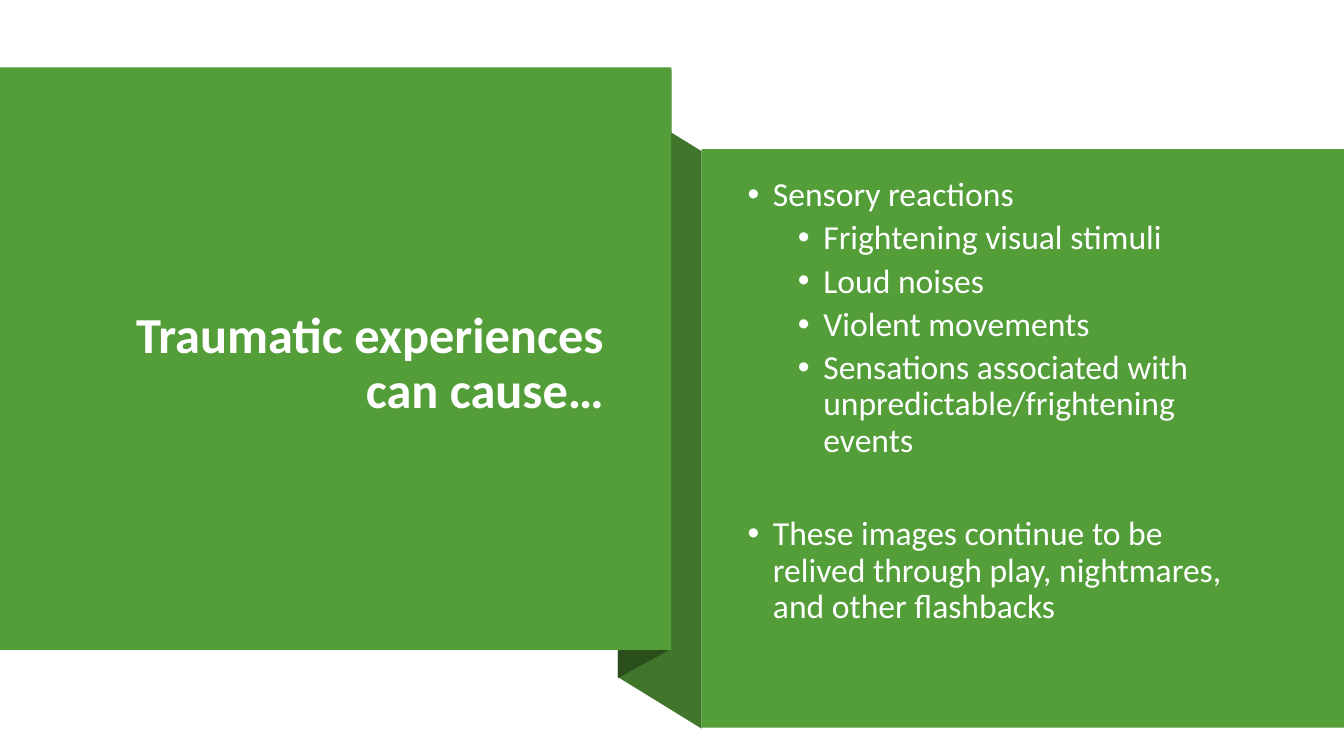
from pptx import Presentation
from pptx.dml.color import RGBColor
from pptx.enum.shapes import MSO_SHAPE as Preset
from pptx.enum.text import MSO_ANCHOR as Anchor, PP_ALIGN as Align
from pptx.oxml.ns import qn
from pptx.util import Cm, Pt
from lxml.etree import SubElement

FONT = "Calibri"
GREEN, MID_GREEN, DARK_GREEN = "549E39", "3F762B", "2A4F1C"
TITLE = "Traumatic experiences can cause…"
REACTIONS = [
    (0, "Sensory reactions", 10),
    (1, "Frightening visual stimuli", 5),
    (1, "Loud noises", 5),
    (1, "Violent movements", 5),
    (1, "Sensations associated with unpredictable/frightening events", 5),
    (0, "These images continue to be relived through play, nightmares, "
        "and other flashbacks", 41),
]


def paint(shape, color):
    shape.shadow.inherit = False
    shape.fill.solid()
    shape.fill.fore_color.rgb = RGBColor.from_string(color)
    shape.line.fill.background()


def write(paragraph, text, size, color, bold=False):
    paragraph.text = text
    paragraph.line_spacing = 0.9
    font = paragraph.runs[0].font
    font.name, font.size, font.bold = FONT, Pt(size), bold
    font.color.rgb = RGBColor.from_string(color)


def add_bullet(paragraph, level):
    paragraph.level = level
    props = paragraph._p.get_or_add_pPr()
    props.set("marL", str(Cm(0.64 + 1.27 * level)))
    props.set("indent", str(Cm(-0.64)))
    SubElement(props, qn("a:buFont")).set("typeface", "Arial")
    SubElement(props, qn("a:buChar")).set("char", "•")


def add_fold(slide, box, slant, color):
    left, top, width, height = box
    drop, rise = max(slant, 0), max(-slant, 0)
    right, bottom = left + width, top + height
    corners = [(right, bottom - rise), (left, bottom - drop),
               (left, top + rise), (right, top + drop)]
    points = [(Cm(x), Cm(y)) for x, y in corners]
    outline = slide.shapes.build_freeform(*points[0])
    outline.add_line_segments(points[1:], close=True)
    paint(outline.convert_to_shape(), color)


def add_panel(slide, box, text_inset):
    left, top, width, height = box
    panel = slide.shapes.add_shape(Preset.RECTANGLE, *map(Cm, box))
    paint(panel, GREEN)
    from_left, from_top, from_right, from_bottom = text_inset
    area = (left + from_left, top + from_top,
            width - from_left - from_right, height - from_top - from_bottom)
    frame = slide.shapes.add_textbox(*map(Cm, area)).text_frame
    frame.word_wrap = True
    frame.vertical_anchor = Anchor.MIDDLE
    return frame


def add_title_panel(slide, box):
    heading = add_panel(slide, box, (2.41, 1.65, 1.45, 1.35)).paragraphs[0]
    write(heading, TITLE, 36, "FFFFFF", bold=True)
    heading.alignment = Align.RIGHT


def add_reactions_panel(slide, box):
    frame = add_panel(slide, box, (0.91, 0.94, 2.22, 2.8))
    for index, (level, text, gap) in enumerate(REACTIONS):
        reaction = frame.add_paragraph() if index else frame.paragraphs[0]
        write(reaction, text, 24, "FEFFFF")
        reaction.space_before = Pt(gap)
        add_bullet(reaction, level)


def main():
    deck = Presentation()
    deck.slide_width, deck.slide_height = Cm(33.87), Cm(19.05)
    slide = deck.slides.add_slide(deck.slide_layouts[6])
    add_fold(slide, (15.57, 2.51, 2.11, 15.85), 1.3, MID_GREEN)
    add_fold(slide, (15.57, 1.75, 1.35, 15.34), -0.74, DARK_GREEN)
    add_title_panel(slide, (0, 1.7, 16.92, 14.68))
    add_reactions_panel(slide, (17.68, 3.76, 16.19, 14.58))
    deck.save("out.pptx")


if __name__ == "__main__":
    main()
